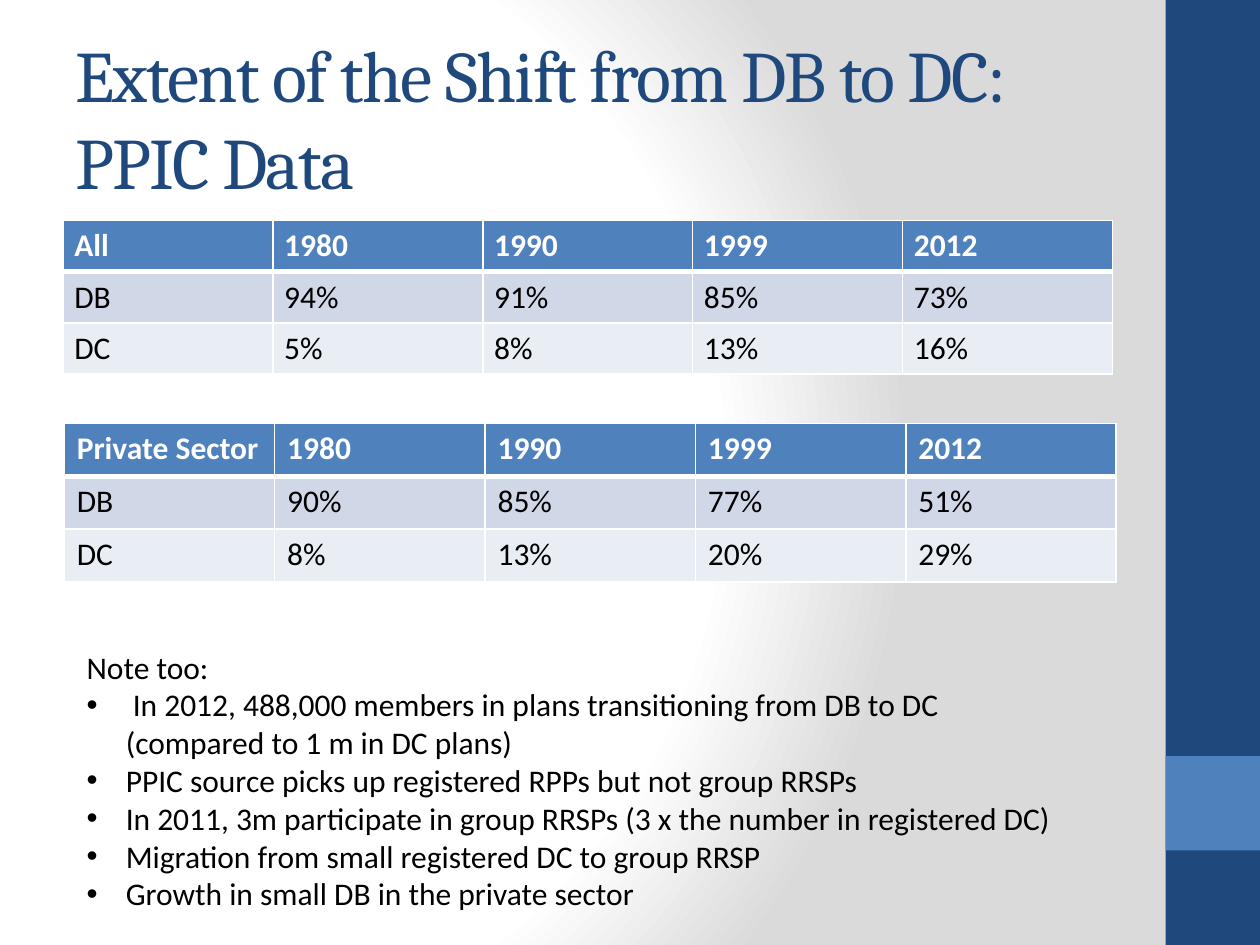
from lxml import etree
from pptx import Presentation
from pptx.dml.color import RGBColor
from pptx.enum.shapes import MSO_SHAPE as SHAPE
from pptx.enum.text import MSO_ANCHOR as ANCHOR
from pptx.oxml import parse_xml
from pptx.oxml.ns import nsdecls, qn
from pptx.util import Inches, Pt

CELL = 0.25  # the slide is a grid of 40 columns by 30 rows
NAVY, BLUE, WHITE, BLACK = "1F497D", "4F81BD", "FFFFFF", "000000"
BANDS = [BLUE, "D0D8E8", "E9EDF4"]

ALL_PLANS = [
    ["All", "1980", "1990", "1999", "2012"],
    ["DB", "94%", "91%", "85%", "73%"],
    ["DC", "5%", "8%", "13%", "16%"],
]
PRIVATE_SECTOR = [
    ["Private Sector", "1980", "1990", "1999", "2012"],
    ["DB", "90%", "85%", "77%", "51%"],
    ["DC", "8%", "13%", "20%", "29%"],
]
NOTES = [
    [" In 2012, 488,000 members in plans transitioning from DB to DC",
     "(compared to 1 m in DC plans)"],
    ["PPIC source picks up registered RPPs but not group RRSPs"],
    ["In 2011, 3m participate in group RRSPs (3 x the number in registered DC)"],
    ["Migration from small registered DC to group RRSP"],
    ["Growth in small DB in the private sector"],
]


def grid(*cells):
    return [Inches(n * CELL) for n in cells]


def paint(fill, color):
    fill.solid()
    fill.fore_color.rgb = RGBColor.from_string(color)


def add_lines(p, lines, size=18, font="Calibri", color=BLACK, bold=False):
    """Add one run per line, with line breaks between them."""
    for i, line in enumerate(lines):
        if i:
            p.add_line_break()
        r = p.add_run()
        r.text = line
        r.font.size, r.font.name, r.font.bold = Pt(size), font, bold
        r.font.color.rgb = RGBColor.from_string(color)


def set_background(s):
    """Fill the background with a circular white to grey gradient."""
    paint(s.background.fill, WHITE)
    stops = "".join(
        f'<a:gs pos="{pos * 1000}"><a:srgbClr val="{color}"/></a:gs>'
        for pos, color in [(0, WHITE), (75, WHITE), (100, "DADADA")])
    gradient = parse_xml(
        f'<a:gradFill {nsdecls("a")} rotWithShape="1"><a:gsLst>{stops}</a:gsLst>'
        '<a:path path="circle"><a:fillToRect l="20000" t="50000" r="100000" b="50000"/>'
        '</a:path></a:gradFill>')
    solid = next(s.background._cSld.iter(qn("a:solidFill")))
    solid.getparent().replace(solid, gradient)


def add_block(s, box, color):
    sp = s.shapes.add_shape(SHAPE.RECTANGLE, *grid(*box))
    sp.shadow.inherit = False
    paint(sp.fill, color)
    sp.line.fill.background()


def add_text_box(s, box, anchor=ANCHOR.TOP):
    tf = s.shapes.add_textbox(*grid(*box)).text_frame
    tf.word_wrap = True
    tf.vertical_anchor = anchor
    return tf


def add_title(s, box, lines):
    p = add_text_box(s, box, ANCHOR.MIDDLE).paragraphs[0]
    add_lines(p, lines, 41.4, "Cambria", NAVY)
    for r in p.runs:
        r.font._element.set("spc", "-100")


def set_borders(cell, top, bottom):
    tc_pr = cell._tc.get_or_add_tcPr()
    for side, width in [("L", 1), ("R", 1), ("T", top), ("B", bottom)]:
        ln = etree.SubElement(tc_pr, qn(f"a:ln{side}"), w=str(Pt(width)))
        fill = etree.SubElement(ln, qn("a:solidFill"))
        etree.SubElement(fill, qn("a:srgbClr"), val=WHITE)


def add_plan_table(s, box, rows, inset):
    table = s.shapes.add_table(len(rows), len(rows[0]), *grid(*box)).table
    for i, row in enumerate(rows):
        for j, text in enumerate(row):
            cell = table.cell(i, j)
            cell.margin_left = cell.margin_right = Inches(inset)
            set_borders(cell, 3 if i == 1 else 1, 3 if i == 0 else 1)
            paint(cell.fill, BANDS[i])
            add_lines(cell.text_frame.paragraphs[0], [text],
                      color=BLACK if i else WHITE, bold=i == 0)


def add_notes(s, box, heading, notes):
    tf = add_text_box(s, box)
    add_lines(tf.paragraphs[0], [heading])
    indent = Inches(0.31)
    for lines in notes:
        p = tf.add_paragraph()
        p_pr = p._p.get_or_add_pPr()
        p_pr.set("marL", str(indent))
        p_pr.set("indent", str(-indent))
        etree.SubElement(p_pr, qn("a:buFont"), typeface="Arial")
        etree.SubElement(p_pr, qn("a:buChar"), char="•")
        add_lines(p, lines)


def main():
    prs = Presentation()
    prs.slide_width, prs.slide_height = grid(40, 30)
    s = prs.slides.add_slide(prs.slide_layouts[6])
    set_background(s)
    add_block(s, (37, 0, 3, 30), NAVY)
    add_block(s, (37, 24, 3, 3), BLUE)
    add_title(s, (2, 1.2, 33.32, 5), ["Extent of the Shift from DB to DC:", "PPIC Data"])
    add_plan_table(s, (2, 7, 33.32, 4.88), ALL_PLANS, 0.09)
    add_plan_table(s, (2.04, 13.44, 33.4, 5.04), PRIVATE_SECTOR, 0.1)
    add_notes(s, (2.36, 20.36, 33.08, 11.32), "Note too:", NOTES)
    prs.save("out.pptx")


if __name__ == "__main__":
    main()
